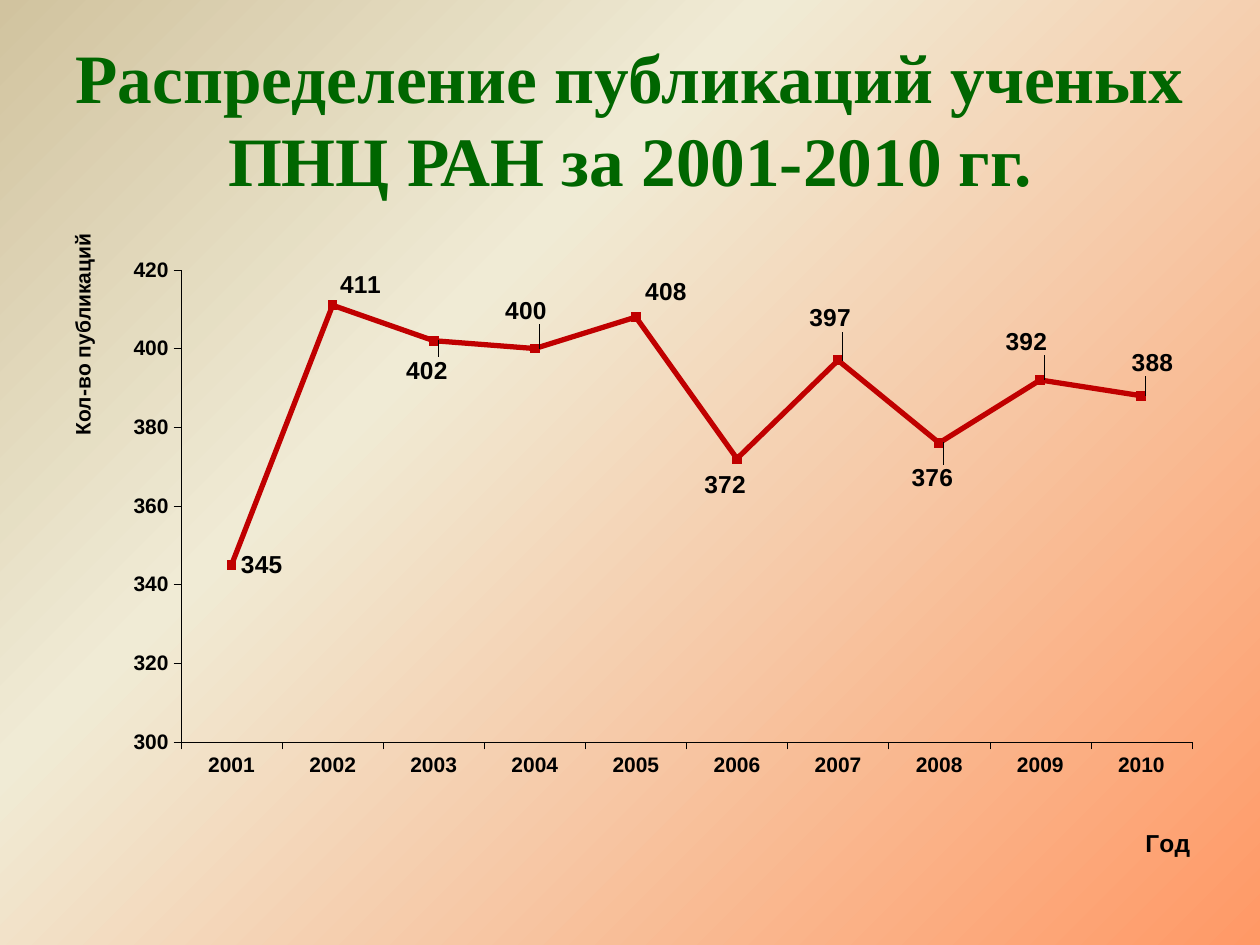
from dataclasses import dataclass

from lxml import etree
from pptx import Presentation
from pptx.chart.data import CategoryChartData
from pptx.dml.color import RGBColor
from pptx.enum.chart import XL_CHART_TYPE, XL_LABEL_POSITION, XL_MARKER_STYLE, XL_TICK_MARK
from pptx.enum.text import MSO_ANCHOR, PP_ALIGN
from pptx.oxml.ns import qn
from pptx.util import Pt

LINE_MARKERS = XL_CHART_TYPE.LINE_MARKERS
RIGHT = XL_LABEL_POSITION.RIGHT
SQUARE = XL_MARKER_STYLE.SQUARE
OUTSIDE = XL_TICK_MARK.OUTSIDE
MIDDLE = MSO_ANCHOR.MIDDLE
CENTER = PP_ALIGN.CENTER

EMU_PER_PX = 914400 // 126
CHART_BOX = (49, 217, 1172, 655)


@dataclass(frozen=True)
class Theme:
    title_font: str = "Times New Roman"
    chart_font: str = "Arial"
    title_color: str = "006600"
    text_color: str = "000000"
    series_color: str = "C00000"
    background: tuple = ((0, "FF9966"), (65, "F0EBD5"), (100, "D1C39F"))
    title_size: float = 39.6
    label_size: float = 14
    axis_size: float = 12


THEME = Theme()

YEARS = [str(year) for year in range(2001, 2011)]
PUBLICATIONS = (345, 411, 402, 400, 408, 372, 397, 376, 392, 388)
LABEL_SHIFTS = {
    1: (-2, -20), 2: (-37, 30), 3: (-39, -38), 4: (0, -25), 5: (-42, 26),
    6: (-38, -42), 7: (-37, 35), 8: (-44, -38), 9: (-19, -33),
}


def px(*values):
    return [value * EMU_PER_PX for value in values]


def set_font(font, name, size, color):
    font.name = name
    font.size = Pt(size)
    font.bold = True
    font.color.rgb = RGBColor.from_string(color)


def chart_font(font, size):
    set_font(font, THEME.chart_font, size, THEME.text_color)


def paint_background(s):
    fill = s.background.fill
    fill.gradient()
    fill.gradient_angle = 135
    stops = s.element.find(".//" + qn("a:gsLst"))
    for stop in list(stops):
        stops.remove(stop)
    for percent, color in THEME.background:
        stop = etree.SubElement(stops, qn("a:gs"), pos=str(percent * 1000))
        etree.SubElement(stop, qn("a:srgbClr"), val=color)


def add_title(s, text, box):
    tf = s.shapes.add_textbox(*px(*box)).text_frame
    tf.word_wrap = True
    tf.vertical_anchor = MIDDLE
    p = tf.paragraphs[0]
    p.text = text
    p.alignment = CENTER
    set_font(p.font, THEME.title_font, THEME.title_size, THEME.title_color)


def place(parent, index, x, y, size=None, edge=False):
    for old in parent.findall(qn("c:layout")):
        parent.remove(old)
    layout = etree.Element(qn("c:layout"))
    manual = etree.SubElement(layout, qn("c:manualLayout"))
    settings = []
    if size:
        settings.append(("layoutTarget", "inner"))
    if edge:
        settings += [("xMode", "edge"), ("yMode", "edge")]
    width, height = CHART_BOX[2:]
    settings += [("x", x / width), ("y", y / height)]
    if size:
        settings += [("w", size[0] / width), ("h", size[1] / height)]
    for tag, value in settings:
        etree.SubElement(manual, qn("c:" + tag), val=str(value))
    parent.insert(index, layout)


def style_axis(axis, title, title_size, title_spot, rotation):
    axis.has_major_gridlines = False
    axis.major_tick_mark = OUTSIDE
    chart_font(axis.tick_labels.font, THEME.axis_size)
    axis.format.line.width = Pt(0.25)
    axis.format.line.color.rgb = RGBColor.from_string(THEME.text_color)
    tf = axis.axis_title.text_frame
    p = tf.paragraphs[0]
    r = p.add_run()
    r.text = title
    chart_font(p.font, title_size)
    chart_font(r.font, title_size)
    heading = axis.axis_title._element
    heading.find(".//" + qn("a:bodyPr")).set("rot", str(rotation * 60000))
    place(heading, 1, *title_spot, edge=True)


def style_series(series):
    color = RGBColor.from_string(THEME.series_color)
    series.smooth = False
    series.format.line.width = Pt(3)
    series.format.line.color.rgb = color
    marker = series.marker
    marker.style = SQUARE
    marker.size = 5
    for fill in (marker.format.fill, marker.format.line.fill):
        fill.solid()
        fill.fore_color.rgb = color


def label_points(series):
    labels = series.data_labels
    labels.show_value = True
    labels.position = RIGHT
    chart_font(labels.font, THEME.label_size)
    for index in LABEL_SHIFTS:
        label = series.points[index].data_label
        label.position = RIGHT
        chart_font(label.font, THEME.label_size)
    for element in series._element.iter(qn("c:dLbl")):
        index = int(element.find(qn("c:idx")).get("val"))
        place(element, 1, *LABEL_SHIFTS[index])


def add_publication_chart(s):
    data = CategoryChartData()
    data.categories = YEARS
    data.add_series("Series 1", PUBLICATIONS)
    chart = s.shapes.add_chart(LINE_MARKERS, *px(*CHART_BOX), data).chart
    chart.has_legend = False
    chart.has_title = False
    chart_font(chart.font, THEME.axis_size)
    plot = chart.plots[0]
    plot.vary_by_categories = False
    place(chart._chartSpace.find(".//" + qn("c:plotArea")), 0, 132, 53, (1011, 472), True)
    style_axis(chart.category_axis, "Год", THEME.label_size, (1092, 606), 0)
    values = chart.value_axis
    style_axis(values, "Кол-во публикаций", THEME.axis_size, (17, 13), -90)
    values.minimum_scale = 300
    values.maximum_scale = 420
    values.major_unit = 20
    style_series(plot.series[0])
    label_points(plot.series[0])


def main():
    prs = Presentation()
    prs.slide_width, prs.slide_height = px(1260, 945)
    s = prs.slides.add_slide(prs.slide_layouts[6])
    paint_background(s)
    add_title(s, "Распределение публикаций ученых ПНЦ РАН за 2001-2010 гг.", (63, 38, 1134, 158))
    add_publication_chart(s)
    prs.save("out.pptx")


if __name__ == "__main__":
    main()
